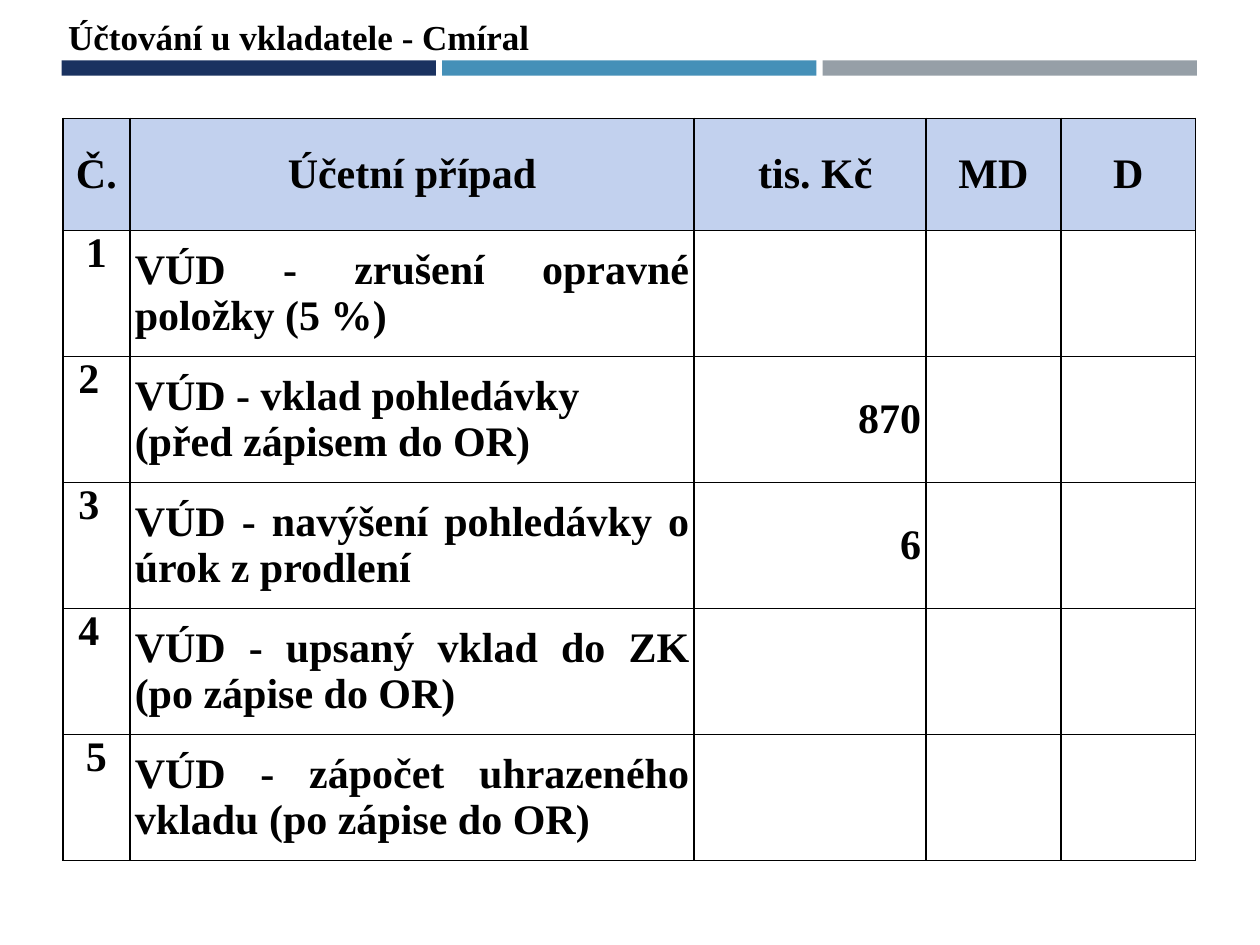
from dataclasses import dataclass

from lxml import etree
from pptx import Presentation
from pptx import util as u
from pptx.dml.color import RGBColor
from pptx.enum import shapes, text
from pptx.oxml.ns import qn


@dataclass(frozen=True)
class Theme:
    font: str = "Times New Roman"
    ink: str = "000000"
    paper: str = "FFFFFF"
    head: str = "C2D1EE"
    bars: tuple = ("1A3260", "4590B8", "969FA7")
    title: int = 20
    body: int = 24
    rule: int = 1


THEME = Theme()
LEFT, CENTER, RIGHT, FULL = (
    text.PP_ALIGN.LEFT, text.PP_ALIGN.CENTER, text.PP_ALIGN.RIGHT, text.PP_ALIGN.JUSTIFY)
TOP, MIDDLE = text.MSO_ANCHOR.TOP, text.MSO_ANCHOR.MIDDLE

COLS = (0.53, 4.48, 1.84, 1.07, 1.07)
ROWS = (0.89, 1, 1, 1, 1, 1)
HEADS = ("Č.", "Účetní případ", " tis. Kč", "MD", "D")
# Number, its alignment, case, amount
CASES = (
    ("1", CENTER, "VÚD - zrušení opravné položky (5 %)", ""),
    (" 2", LEFT, "VÚD - vklad pohledávky \n(před zápisem do OR)", " 870"),
    (" 3", LEFT, "VÚD - navýšení pohledávky o úrok z prodlení", " 6"),
    (" 4", LEFT, "VÚD - upsaný vklad do ZK (po zápise do OR)", ""),
    ("5", CENTER, "VÚD - zápočet uhrazeného vkladu (po zápise do OR)", ""),
)


def apply(item, **values):
    for name, value in values.items():
        setattr(item, name, value)


def write(frame, words, size, align):
    frame.text = words
    for para in frame.paragraphs:
        para.alignment = align
        for run in para.runs:
            apply(run.font, name=THEME.font, size=u.Pt(size), bold=True)
            run.font.color.rgb = RGBColor.from_string(THEME.ink)


def paint(fill, color):
    fill.solid()
    fill.fore_color.rgb = RGBColor.from_string(color)


def add_title(slide, words):
    title = slide.shapes.title
    apply(title, left=u.Inches(0.44), top=u.Inches(0.07),
          width=u.Inches(3.89), height=u.Inches(0.44))
    frame = title.text_frame
    write(frame, words, THEME.title, LEFT)
    apply(frame, word_wrap=False, vertical_anchor=TOP,
          auto_size=text.MSO_AUTO_SIZE.SHAPE_TO_FIT_TEXT)


def add_bars(slide, left=0.49, top=0.48, wide=2.97, high=0.12, step=3.02):
    for i, color in enumerate(THEME.bars):
        box = map(u.Inches, (left + i * step, top, wide, high))
        bar = slide.shapes.add_shape(shapes.MSO_SHAPE.RECTANGLE, *box)
        bar.shadow.inherit = False
        paint(bar.fill, color)
        bar.line.fill.background()


def frame_cell(cell):
    """Draw the four borders; they must come before the fill in the XML."""
    props = cell._tc.get_or_add_tcPr()
    for i, side in enumerate(("lnL", "lnR", "lnT", "lnB")):
        line = etree.Element(qn(f"a:{side}"), w=str(u.Pt(THEME.rule)))
        fill = etree.SubElement(line, qn("a:solidFill"))
        etree.SubElement(fill, qn("a:srgbClr"), val=THEME.ink)
        props.insert(i, line)


def fill_cell(cell, words, align, anchor=MIDDLE, color=THEME.paper):
    apply(cell, margin_left=u.Inches(0.04), margin_right=u.Inches(0.04),
          margin_top=0, margin_bottom=0, vertical_anchor=anchor)
    paint(cell.fill, color)
    frame_cell(cell)
    if words:
        write(cell.text_frame, words, THEME.body, align)


def add_grid(slide):
    box = map(u.Inches, (0.5, 0.94, sum(COLS), sum(ROWS)))
    grid = slide.shapes.add_table(len(ROWS), len(COLS), *box).table
    for col, wide in zip(grid.columns, COLS):
        col.width = u.Inches(wide)
    for row, high in zip(grid.rows, ROWS):
        row.height = u.Inches(high)
    for c, words in enumerate(HEADS):
        fill_cell(grid.cell(0, c), words, CENTER, color=THEME.head)
    for r, (mark, align, case, amount) in enumerate(CASES, 1):
        fill_cell(grid.cell(r, 0), mark, align, TOP)
        for c, (words, side) in enumerate(
                ((case, FULL), (amount, RIGHT), ("", LEFT), ("", LEFT)), 1):
            fill_cell(grid.cell(r, c), words, side)


def main():
    deck = Presentation()
    apply(deck, slide_width=u.Inches(10), slide_height=u.Inches(7.5))
    slide = deck.slides.add_slide(deck.slide_layouts[5])
    add_bars(slide)
    add_title(slide, "Účtování u vkladatele - Cmíral")
    add_grid(slide)
    deck.save("out.pptx")


if __name__ == "__main__":
    main()
